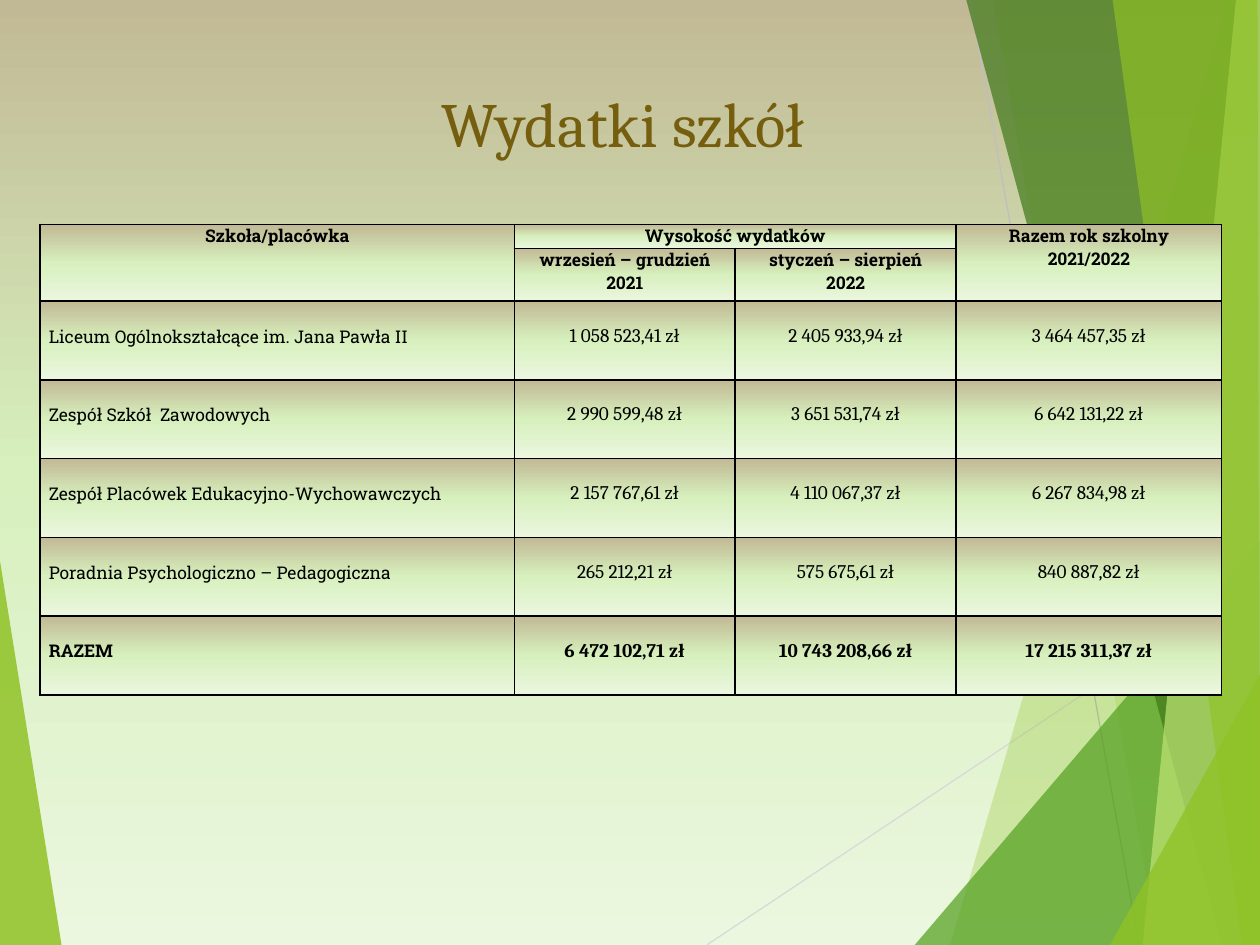
from copy import deepcopy
from dataclasses import dataclass

from lxml import etree
from pptx import Presentation
from pptx.dml.color import RGBColor
from pptx.enum.shapes import MSO_CONNECTOR
from pptx.enum.text import MSO_ANCHOR, PP_ALIGN
from pptx.oxml.ns import qn
from pptx.util import Pt

STRAIGHT = MSO_CONNECTOR.STRAIGHT
TOP = MSO_ANCHOR.TOP
LEFT, CENTER = PP_ALIGN.LEFT, PP_ALIGN.CENTER


@dataclass(frozen=True)
class Theme:
    heading_font: str = "Cambria"
    label_font: str = "Roboto Slab"
    title_size: float = 36
    label_size: float = 10
    amount_size: float = 11
    title: str = "755E0D"
    text: str = "000000"
    border: str = "000000"
    lime: str = "90C226"
    green: str = "54A021"
    forest: str = "3F7819"
    pale: str = "C0E474"
    ray_light: str = "D9D9D9"
    ray_dark: str = "BFBFBF"
    gradient: tuple = ((0, "C1B995"), (0.5, "D7F0BD"), (1, "EBF7DF"))


THEME = Theme()
W, H = 720, 540

LEFT_WEDGE = (THEME.lime, 85, [(-0.7, 316), (35.3, 540.7), (-0.7, H)])
RAYS = [
    (THEME.ray_light, (403.9, H), (720.7, 329)),
    (THEME.ray_dark, (554.4, 0), (650.9, H)),
]
FACETS = [
    (THEME.lime, 30, [(702, 0), (542.9, H), (W, H), (W, 0)]),
    (THEME.lime, 20, [(567.4, 0), (661.7, H), (W, H), (W, 0)]),
    (THEME.green, 72, [(522.7, H), (W, 308.9), (W, H)]),
    (THEME.forest, 70, [(552.2, 0), (698.4, H), (W, H), (W, 0)]),
    (THEME.pale, 70, [(706.3, 0), (653, H), (W, H), (W, 0)]),
    (THEME.lime, 65, [(635.8, 0), (709.9, H), (W, H), (718.6, 0)]),
    (THEME.lime, 80, [(634.3, H), (W, 385.2), (W, H)]),
]

COLUMNS = [271, 126.2, 126.2, 151.8]
ROWS = [13.7, 30.2] + [45] * 5
HEADERS = {
    (0, 0): "Szkoła/placówka",
    (0, 1): "Wysokość wydatków",
    (0, 3): "Razem rok szkolny\n2021/2022",
    (1, 1): "wrzesień – grudzień\n2021",
    (1, 2): "styczeń – sierpień\n2022",
}
EXPENSES = [
    ("Liceum Ogólnokształcące im. Jana Pawła II",
     "1 058 523,41 zł", "2 405 933,94 zł", "3 464 457,35 zł"),
    ("Zespół Szkół  Zawodowych",
     "2 990 599,48 zł", "3 651 531,74 zł", "6 642 131,22 zł"),
    ("Zespół Placówek Edukacyjno-Wychowawczych",
     "2 157 767,61 zł", "4 110 067,37 zł", "6 267 834,98 zł"),
    ("Poradnia Psychologiczno – Pedagogiczna",
     "265 212,21 zł", "575 675,61 zł", "840 887,82 zł"),
    ("RAZEM",
     "6 472 102,71 zł", "10 743 208,66 zł", "17 215 311,37 zł"),
]


def rgb(color):
    return RGBColor.from_string(color)


def write(tf, text, *, font, size, color=THEME.text, bold=False, align=CENTER):
    """Fill a text frame, one paragraph for each line of text."""
    for i, line in enumerate(text.split("\n")):
        p = tf.paragraphs[0] if i == 0 else tf.add_paragraph()
        p.alignment = align
        r = p.add_run()
        r.text = line
        r.font.name = font
        r.font.size = Pt(size)
        r.font.bold = bold
        r.font.color.rgb = rgb(color)


def set_gradient(fill, owner):
    """Give fill the three-stop gradient; owner is the element that holds it."""
    fill.gradient()
    fill.gradient_angle = 270
    stops = owner.find(".//" + qn("a:gsLst"))
    stops.append(deepcopy(stops[-1]))
    for stop, (position, color) in zip(fill.gradient_stops, THEME.gradient):
        stop.position = position
        stop.color.rgb = rgb(color)


def set_borders(tc_pr):
    for side in ("a:lnL", "a:lnR", "a:lnT", "a:lnB"):
        ln = etree.SubElement(tc_pr, qn(side), w=str(Pt(1)))
        solid = etree.SubElement(ln, qn("a:solidFill"))
        etree.SubElement(solid, qn("a:srgbClr"), val=THEME.border)


def add_facet(s, color, opacity, points):
    corners = [(Pt(x), Pt(y)) for x, y in points]
    builder = s.shapes.build_freeform(*corners[0])
    builder.add_line_segments(corners[1:], close=True)
    sp = builder.convert_to_shape()
    sp.shadow.inherit = False
    sp.line.fill.background()
    sp.fill.solid()
    sp.fill.fore_color.rgb = rgb(color)
    clr = sp.element.spPr.find(".//" + qn("a:srgbClr"))
    etree.SubElement(clr, qn("a:alpha"), val=str(opacity * 1000))


def add_ray(s, color, start, end):
    cxn = s.shapes.add_connector(STRAIGHT, *(Pt(v) for v in start + end))
    cxn.line.color.rgb = rgb(color)
    cxn.line.width = Pt(0.75)
    etree.SubElement(cxn.element.spPr, qn("a:effectLst"))


def add_title(s, text):
    tf = s.shapes.add_textbox(Pt(14.4), Pt(44.5), Pt(684), Pt(66)).text_frame
    tf.word_wrap = True
    tf.vertical_anchor = TOP
    write(tf, text, font=THEME.heading_font, size=THEME.title_size,
          color=THEME.title)


def format_cell(cell, top):
    cell.margin_left = cell.margin_right = Pt(5)
    cell.margin_top, cell.margin_bottom = Pt(top), Pt(0)
    cell.vertical_anchor = TOP
    tc_pr = cell._tc.get_or_add_tcPr()
    set_borders(tc_pr)
    set_gradient(cell.fill, tc_pr)


def add_expense_table(s):
    table = s.shapes.add_table(len(ROWS), len(COLUMNS), Pt(22.9), Pt(128.2),
                               Pt(sum(COLUMNS)), Pt(sum(ROWS))).table
    table.first_row = table.horz_banding = False
    for column, width in zip(table.columns, COLUMNS):
        column.width = Pt(width)
    for i, height in enumerate(ROWS):
        table.rows[i].height = Pt(height)
        for cell in table.rows[i].cells:
            format_cell(cell, top=0 if i < 2 else 13.5)
            cell.text_frame.paragraphs[0].font.size = Pt(THEME.label_size)

    for first, last in (((0, 0), (1, 0)), ((0, 1), (0, 2)), ((0, 3), (1, 3))):
        table.cell(*first).merge(table.cell(*last))
    for place, text in HEADERS.items():
        write(table.cell(*place).text_frame, text, font=THEME.label_font,
              size=THEME.label_size, bold=True)
    for i, (school, *amounts) in enumerate(EXPENSES, start=2):
        bold = i == len(ROWS) - 1
        write(table.cell(i, 0).text_frame, school, font=THEME.label_font,
              size=THEME.label_size, bold=bold, align=LEFT)
        for j, amount in enumerate(amounts, start=1):
            write(table.cell(i, j).text_frame, amount, font=THEME.heading_font,
                  size=THEME.amount_size, bold=bold)


def main():
    prs = Presentation()
    prs.slide_width, prs.slide_height = Pt(W), Pt(H)
    s = prs.slides.add_slide(prs.slide_layouts[6])
    set_gradient(s.background.fill, s.element)
    add_facet(s, *LEFT_WEDGE)
    for ray in RAYS:
        add_ray(s, *ray)
    for facet in FACETS:
        add_facet(s, *facet)
    add_title(s, "Wydatki szkół")
    add_expense_table(s)
    prs.save("out.pptx")


if __name__ == "__main__":
    main()
